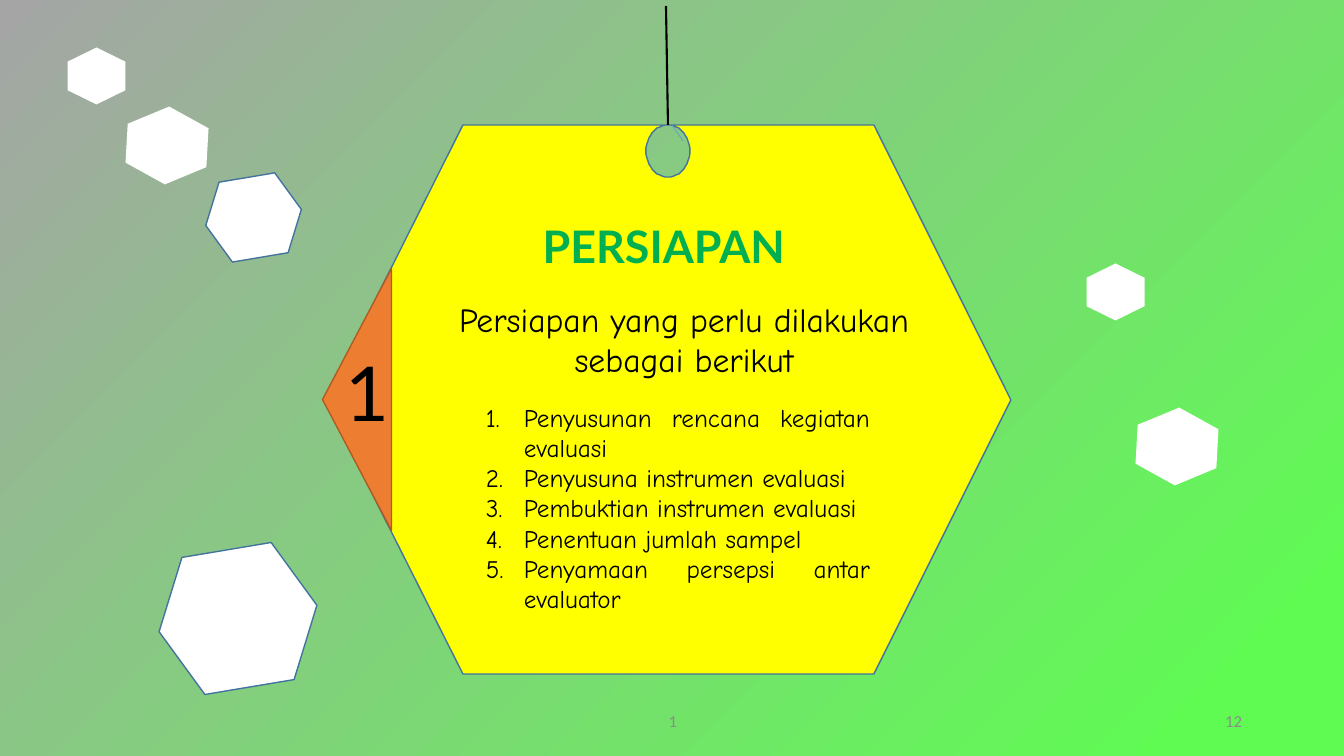
"""Build the PERSIAPAN slide: a hanging yellow tag with a numbered list."""
import math

import lxml.etree
import pptx
import pptx.dml.color
import pptx.enum.shapes
import pptx.enum.text
import pptx.oxml.ns
import pptx.util

SHAPES = pptx.enum.shapes.MSO_SHAPE
ALIGN = pptx.enum.text.PP_ALIGN
ANCHOR = pptx.enum.text.MSO_ANCHOR
EMU_PER_PX = 914400 / 100.8

BACKGROUND_STOPS = [(0, "A5A5A5"), (0.92, "5FFB53")]
OUTLINE = "43739E"
TAG_CORNERS = [(874, 125), (1011, 400), (874, 674), (463, 674), (325, 400), (463, 125)]
HOLE_CENTER, HOLE_RADII, HOLE_STEPS = (668, 151), (22, 26), 48

STRINGS = [
    ((666, 6), (668, 125), "000000", 1.5),
    ((672, 125), (683, 141), "5B9BD5", 0.5),
]
HEXAGONS = [
    ((68, 47, 57, 58), 90, None),
    ((128, 105, 78, 81), 93.2, None),
    ((205, 177, 97, 81), 170.5, OUTLINE),
    ((158, 549, 160, 139), 170.5, OUTLINE),
    ((1087, 263, 57, 58), 90, None),
    ((1138, 406, 78, 81), 93.2, None),
]
NUMBER_CORNER = (226, 365, 262, 69)

STEPS = [
    "Penyusunan rencana kegiatan evaluasi",
    "Penyusuna instrumen evaluasi",
    "Pembuktian instrumen evaluasi",
    "Penentuan jumlah sampel",
    "Penyamaan persepsi antar evaluator",
]
STEPS_BOX = (476, 397, 404, 285)
INDENT = 38
LABELS = [
    ((434, 294, 500, 92), "Persiapan yang perlu dilakukan sebagai berikut",
     "Comic Neue", 24, "000000", False, ALIGN.CENTER, ANCHOR.TOP),
    ((514, 214, 300, 65), "PERSIAPAN", "Lato", 32, "00B050", True, ALIGN.CENTER, ANCHOR.TOP),
    ((336, 341, 24, 102), "1", "Lato", 54, "000000", False, ALIGN.LEFT, ANCHOR.TOP),
    ((446, 701, 454, 40), "1", "Calibri", 12, "8C8C8C", False, ALIGN.CENTER, ANCHOR.MIDDLE),
    ((950, 701, 302, 40), "12", "Calibri", 12, "8C8C8C", False, ALIGN.RIGHT, ANCHOR.MIDDLE),
]


def px(*lengths):
    return [pptx.util.Emu(round(length * EMU_PER_PX)) for length in lengths]


def color(value):
    return pptx.dml.color.RGBColor.from_string(value)


def add_element(parent, tag, **attributes):
    return lxml.etree.SubElement(parent, pptx.oxml.ns.qn(tag), attributes)


def paint_background(slide):
    fill = slide.background.fill
    fill.gradient()
    for stop, (position, value) in zip(fill.gradient_stops, BACKGROUND_STOPS):
        stop.position = position
        stop.color.rgb = color(value)
    linear = next(slide.element.iter(pptx.oxml.ns.qn("a:lin")))
    gradient = linear.getparent()
    gradient.remove(linear)
    circle = add_element(gradient, "a:path", path="circle")
    add_element(circle, "a:fillToRect", r="100000", b="100000")


def paint(shape, fill, line):
    shape.shadow.inherit = False
    shape.fill.solid()
    shape.fill.fore_color.rgb = color(fill)
    if line:
        shape.line.color.rgb = color(line)
        shape.line.width = pptx.util.Pt(1)
    else:
        shape.line.fill.background()


def add_tag(slide):
    hole = []
    for step in range(HOLE_STEPS + 1):
        angle = 2 * math.pi * step / HOLE_STEPS
        hole.append((HOLE_CENTER[0] - HOLE_RADII[0] * math.sin(angle),
                     HOLE_CENTER[1] - HOLE_RADII[1] * math.cos(angle)))
    builder = slide.shapes.build_freeform(*TAG_CORNERS[-1], scale=EMU_PER_PX)
    builder.add_line_segments(hole + TAG_CORNERS, close=True)
    paint(builder.convert_to_shape(), "FFFF00", OUTLINE)


def add_string(slide, start, end, value, width):
    connector = slide.shapes.add_connector(
        pptx.enum.shapes.MSO_CONNECTOR.STRAIGHT, *px(*start, *end))
    connector.line.color.rgb = color(value)
    connector.line.width = pptx.util.Pt(width)
    add_element(connector.element.spPr, "a:effectLst")


def add_polygon(slide, kind, box, rotation, fill, line):
    shape = slide.shapes.add_shape(kind, *px(*box))
    shape.rotation = rotation
    paint(shape, fill, line)


def add_text(slide, box, lines, font, size, value, bold, align, anchor, numbered=False):
    frame = slide.shapes.add_textbox(*px(*box)).text_frame
    frame.word_wrap = True
    frame.vertical_anchor = anchor
    frame.text = "\n".join(lines)
    for paragraph in frame.paragraphs:
        paragraph.alignment = align
        if numbered:
            indent = px(INDENT)[0]
            properties = paragraph._p.get_or_add_pPr()
            properties.set("marL", str(indent))
            properties.set("indent", str(-indent))
            add_element(properties, "a:buFont", typeface="+mj-lt")
            add_element(properties, "a:buAutoNum", type="arabicPeriod")
        for run in paragraph.runs:
            run.font.name = font
            run.font.size = pptx.util.Pt(size)
            run.font.bold = bold
            run.font.color.rgb = color(value)


def main():
    presentation = pptx.Presentation()
    presentation.slide_width, presentation.slide_height = px(1344, 756)
    slide = presentation.slides.add_slide(presentation.slide_layouts[6])
    paint_background(slide)
    add_tag(slide)
    for string in STRINGS:
        add_string(slide, *string)
    for box, rotation, line in HEXAGONS:
        add_polygon(slide, SHAPES.HEXAGON, box, rotation, "FFFFFF", line)
    add_polygon(slide, SHAPES.ISOSCELES_TRIANGLE, NUMBER_CORNER, 270, "ED7D31", "AF5C24")
    add_text(slide, STEPS_BOX, STEPS, "Comic Neue", 18, "000000", False,
             ALIGN.JUSTIFY, ANCHOR.TOP, numbered=True)
    for box, text, *style in LABELS:
        add_text(slide, box, [text], *style)
    presentation.save("out.pptx")


if __name__ == "__main__":
    main()
